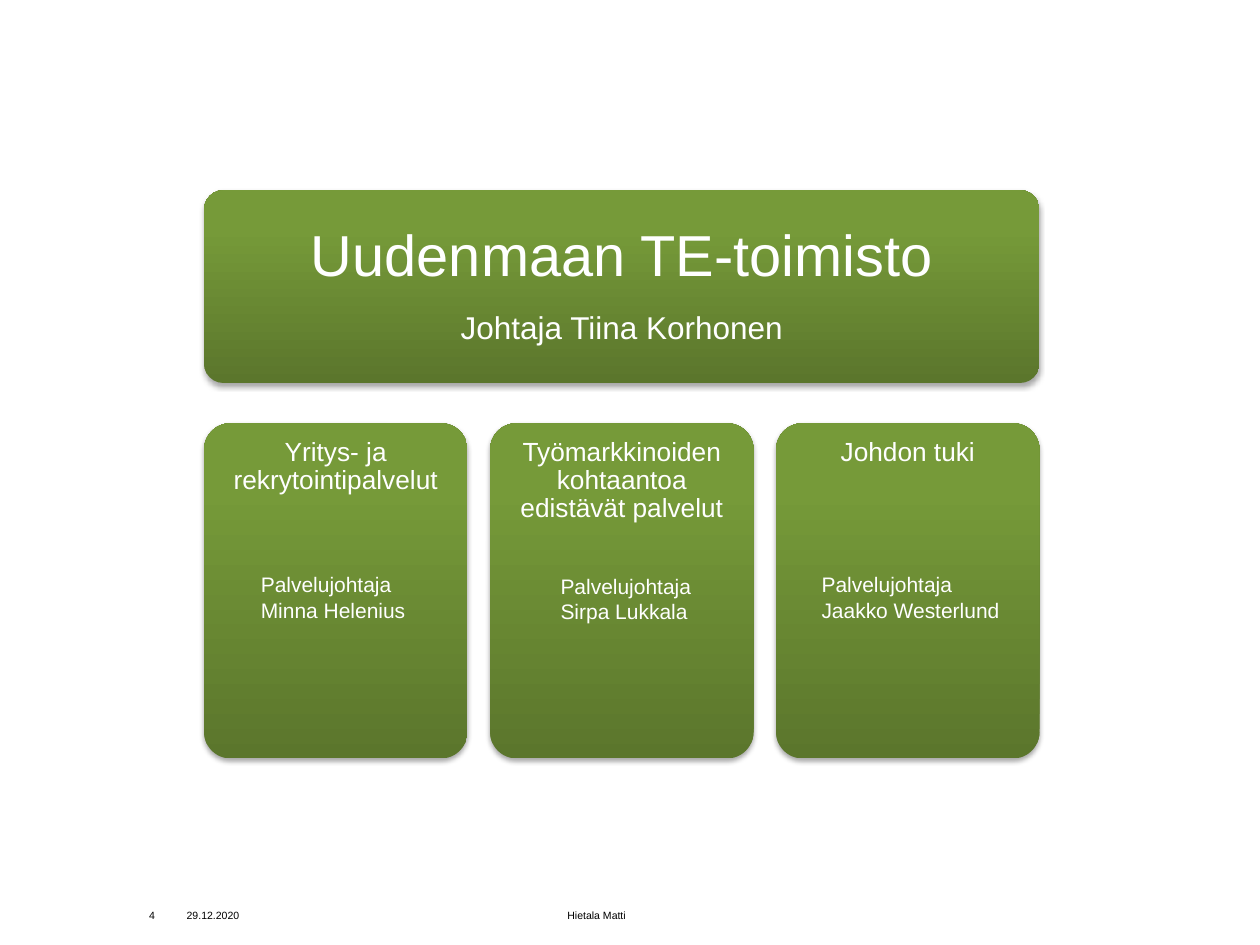
from dataclasses import dataclass

from pptx import Presentation
from pptx.dml.color import RGBColor
from pptx.enum.shapes import MSO_SHAPE as Shape
from pptx.enum.text import MSO_ANCHOR as Anchor, MSO_AUTO_SIZE as AutoSize, PP_ALIGN as Align
from pptx.oxml import parse_xml
from pptx.oxml.ns import nsdecls
from pptx.util import Pt

COLORS = {
    "text": "000000",
    "light": "FFFFFF",
    "shadow": "000000",
    "bottom": "5B762C",
    "middle": "769A39",
    "top": "779C37",
}
STOPS = ((0, "bottom"), (80, "middle"), (100, "top"))
CARD_LEFT, CARD_TOP, CARD_WIDTH, CARD_HEIGHT, CARD_STEP = 116.64, 241.92, 150.48, 191.52, 163.44
FOOTER_TOP, FOOTER_HEIGHT = 515.52, 15.12


@dataclass(frozen=True)
class Frame:
    left: float
    top: float
    width: float
    height: float

    def lengths(self) -> tuple:
        return tuple(Pt(n) for n in (self.left, self.top, self.width, self.height))


@dataclass(frozen=True)
class Service:
    title: str
    manager: str
    frame: Frame
    margins: tuple = (5.04, 2.88)


@dataclass(frozen=True)
class Footer:
    text: str
    left: float
    width: float
    align: Align = Align.CENTER


SERVICES = (
    Service("Yritys- ja rekrytointipalvelut", "Palvelujohtaja\nMinna Helenius",
            Frame(144, 324, 110.16, 34.56)),
    Service("Työmarkkinoiden kohtaantoa edistävät palvelut", "Palvelujohtaja\nSirpa Lukkala",
            Frame(313.2, 324, 126, 36), (7.2, 3.6)),
    Service("Johdon tuki", "Palvelujohtaja Jaakko Westerlund",
            Frame(464.4, 324, 126, 34.56)),
)
FOOTERS = (
    Footer("29.12.2020", 88.56, 66.24),
    Footer("Hietala Matti", 154.8, 372.24),
    Footer("4", 59.76, 28.8, Align.RIGHT),
)


def write(shape, text: str, sizes: tuple, color: str, align: Align, margins: tuple,
          anchor: Anchor = Anchor.TOP, line_spacing: float = 1.0) -> None:
    frame = shape.text_frame
    frame.text = text
    frame.word_wrap = True
    frame.vertical_anchor = anchor
    frame.margin_left = frame.margin_right = Pt(margins[0])
    frame.margin_top = frame.margin_bottom = Pt(margins[1])
    for para, size in zip(frame.paragraphs, sizes):
        para.alignment = align
        para.line_spacing = line_spacing
        for span in para.runs:
            span.font.name = "Arial"
            span.font.size = Pt(size)
            span.font.color.rgb = RGBColor.from_string(COLORS[color])


def add_card(page, frame: Frame):
    card = page.shapes.add_shape(Shape.ROUNDED_RECTANGLE, *frame.lengths())
    card.adjustments[0] = 0.1
    card.line.fill.background()
    card.shadow.inherit = False
    properties = card.element.spPr
    stops = "".join(
        f'<a:gs pos="{position * 1000}"><a:srgbClr val="{COLORS[name]}"/></a:gs>'
        for position, name in STOPS
    )
    properties.insert(2, parse_xml(
        f'<a:gradFill {nsdecls("a")} rotWithShape="1"><a:gsLst>{stops}</a:gsLst>'
        '<a:lin ang="16200000" scaled="0"/></a:gradFill>'
    ))
    properties[-1].append(parse_xml(
        f'<a:outerShdw {nsdecls("a")} blurRad="{Pt(3.1)}" dist="{Pt(1.8)}" dir="5400000" '
        f'rotWithShape="0"><a:srgbClr val="{COLORS["shadow"]}"><a:alpha val="35000"/>'
        '</a:srgbClr></a:outerShdw>'
    ))
    return card


def add_office(page) -> None:
    width = 2 * CARD_STEP + CARD_WIDTH
    card = add_card(page, Frame(CARD_LEFT, 108.72, width, 110.16))
    write(card, "Uudenmaan TE-toimisto\nJohtaja Tiina Korhonen", (33, 18), "light",
          Align.CENTER, (10.8, 10.8), Anchor.MIDDLE, 0.9)
    card.text_frame.paragraphs[0].space_after = Pt(13)


def add_service(page, index: int, service: Service) -> None:
    left = CARD_LEFT + index * CARD_STEP
    card = add_card(page, Frame(left, CARD_TOP, CARD_WIDTH, CARD_HEIGHT))
    write(card, service.title, (15,), "light", Align.CENTER, (4.32, 4.32), line_spacing=0.9)


def add_manager(page, service: Service) -> None:
    box = page.shapes.add_textbox(*service.frame.lengths())
    write(box, service.manager, (12, 12), "light", Align.LEFT, service.margins)
    box.text_frame.auto_size = AutoSize.SHAPE_TO_FIT_TEXT


def add_footer(page, footer: Footer) -> None:
    frame = Frame(footer.left, FOOTER_TOP, footer.width, FOOTER_HEIGHT)
    box = page.shapes.add_textbox(*frame.lengths())
    write(box, footer.text, (6,), "text", footer.align, (0, 0), Anchor.MIDDLE)


def main() -> None:
    """Build the organisation slide of the employment office."""
    deck = Presentation()
    deck.slide_width, deck.slide_height = Pt(720), Pt(540)
    page = deck.slides.add_slide(deck.slide_layouts[6])
    for footer in FOOTERS:
        add_footer(page, footer)
    add_office(page)
    for index, service in enumerate(SERVICES):
        add_service(page, index, service)
    for service in SERVICES:
        add_manager(page, service)
    deck.save("out.pptx")


if __name__ == "__main__":
    main()
